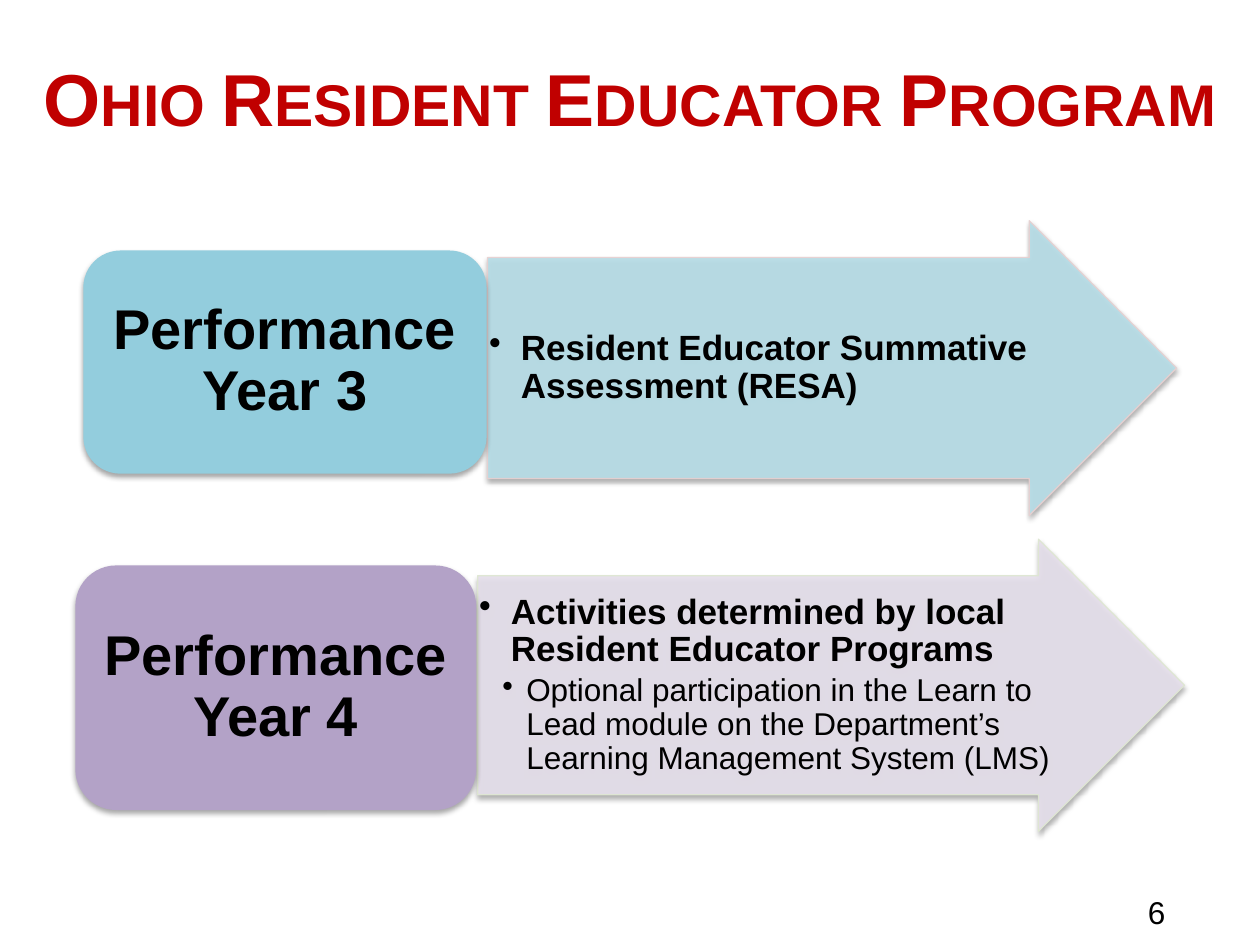
from pptx import Presentation
from pptx import util as u
from pptx.dml.color import RGBColor
from pptx.enum import shapes, text
from pptx.oxml import parse_xml
from pptx.oxml.ns import nsdecls, qn

RED = RGBColor(0xC0, 0x00, 0x00)
BLACK = RGBColor(0, 0, 0)
BLUE = RGBColor(0x93, 0xCD, 0xDD)
PALE_BLUE = RGBColor(0xB7, 0xDE, 0xE8)
PINK = RGBColor(0xE8, 0xD0, 0xD0)
PURPLE = RGBColor(0xB3, 0xA2, 0xC7)
PALE_PURPLE = RGBColor(0xE6, 0xE0, 0xEC)
GREEN = RGBColor(0xDE, 0xE7, 0xD1)

BASE = {"name": "Arial", "bold": True}
HEAD = {**BASE, "size": u.Pt(42)}
LABEL = {**BASE, "size": u.Pt(32)}
POINT = {**BASE, "size": u.Pt(20)}
SUB = {**BASE, "size": u.Pt(18), "bold": False}
CENTER = {"alignment": text.PP_ALIGN.CENTER}
TIGHT = {"line_spacing": 0.9}
ITEM = {**TIGHT, "alignment": text.PP_ALIGN.LEFT, "space_after": u.Pt(3)}

# Format, left margin and hanging indent (cm) of each list level
LEVELS = [(POINT, 0.64, 0.64), (SUB, 0.95, 0.48)]

ROWS = [
    {"label": ["Performance", "Year 3"],
     "box": (1.68, 5.05, 8.13, 4.5), "arrow": (9.83, 4.45, 13.89, 5.94),
     "tints": (BLUE, PALE_BLUE, PINK),
     "items": [(0, "Resident Educator Summative Assessment (RESA)")]},
    {"label": ["Performance", "Year 4"],
     "box": (1.52, 11.4, 8.08, 4.93), "arrow": (9.63, 10.87, 14.25, 5.89),
     "tints": (PURPLE, PALE_PURPLE, GREEN),
     "items": [(0, "Activities determined by local Resident Educator Programs"),
               (1, "Optional participation in the Learn to Lead module on "
                   "the Department’s Learning Management System (LMS)")]},
]


def apply(obj, fmt):
    for key, value in fmt.items():
        setattr(obj, key, value)


def cms(spot):
    return [u.Cm(n) for n in spot]


def write(para, words, font, fmt, color=BLACK):
    apply(para, fmt)
    run = para.add_run()
    run.text = words
    apply(run.font, font)
    run.font.color.rgb = color
    return run


def frame(shape, side, top):
    """Set margins, wrapping and middle anchor."""
    apply(shape.text_frame, {
        "margin_left": u.Cm(side), "margin_right": u.Cm(side),
        "margin_top": u.Cm(top), "margin_bottom": u.Cm(top),
        "word_wrap": True, "auto_size": text.MSO_AUTO_SIZE.NONE,
        "vertical_anchor": text.MSO_ANCHOR.MIDDLE})
    return shape.text_frame


def lines(body, count):
    """Yield the first paragraph, then new ones."""
    for i in range(count):
        yield body.add_paragraph() if i else body.paragraphs[0]


def shade(shape):
    """Add a soft shadow below the shape."""
    shape.shadow.inherit = False
    shape._element.spPr.find(qn("a:effectLst")).append(parse_xml(
        f'<a:outerShdw {nsdecls("a")} blurRad="39370" dist="22860" '
        'dir="5400000" rotWithShape="0"><a:srgbClr val="000000">'
        '<a:alpha val="35000"/></a:srgbClr></a:outerShdw>'))


def bullet(para, left, hang):
    props = para._p.get_or_add_pPr()
    props.set("marL", str(u.Cm(left)))
    props.set("indent", str(-u.Cm(hang)))
    props.append(parse_xml(f'<a:buChar {nsdecls("a")} char="•"/>'))


def add_arrow(slide, spot, fill, edge, items):
    shape = slide.shapes.add_shape(shapes.MSO_SHAPE.RIGHT_ARROW, *cms(spot))
    shape.adjustments[0] = 0.75
    shape.fill.solid()
    shape.fill.fore_color.rgb = fill
    shape.line.color.rgb = edge
    shape.line.width = u.Pt(0.75)
    # Fill and line are slightly see-through
    for tint in shape._element.spPr.iter(qn("a:srgbClr")):
        tint.append(parse_xml(f'<a:alpha {nsdecls("a")} val="90000"/>'))
    shade(shape)
    body = frame(shape, 0.03, 0.03)
    for para, (level, words) in zip(lines(body, len(items)), items):
        font, left, hang = LEVELS[level]
        write(para, words, font, {**ITEM, "level": level + 1})
        bullet(para, left, hang)


def add_label(slide, spot, fill, label):
    shape = slide.shapes.add_shape(
        shapes.MSO_SHAPE.ROUNDED_RECTANGLE, *cms(spot))
    shape.fill.solid()
    shape.fill.fore_color.rgb = fill
    shape.line.fill.background()
    shade(shape)
    body = frame(shape, 0.33, 0.18)
    for para, words in zip(lines(body, len(label)), label):
        write(para, words, LABEL, {**CENTER, **TIGHT})


def add_title(slide, words):
    title = slide.shapes.title
    apply(title, dict(zip(("left", "top", "width", "height"),
                          cms((0.23, 0.58, 24.94, 2.74)))))
    body = frame(title, 0.25, 0.13)
    run = write(body.paragraphs[0], words, HEAD, CENTER, RED)
    run.font._element.set("cap", "small")


def add_number(slide, words):
    box = slide.shapes.add_textbox(*cms((22.17, 17.88, 2.29, 1.02)))
    body = frame(box, 0.25, 0.13)
    write(body.paragraphs[0], words, SUB, CENTER)


def main():
    deck = Presentation()
    deck.slide_width, deck.slide_height = cms((25.4, 19.05))
    slide = deck.slides.add_slide(deck.slide_layouts[5])
    add_title(slide, "Ohio Resident Educator Program")
    # One arrow and one label per year
    for row in ROWS:
        main_tint, pale, edge = row["tints"]
        add_arrow(slide, row["arrow"], pale, edge, row["items"])
        add_label(slide, row["box"], main_tint, row["label"])
    add_number(slide, "6")
    deck.save("out.pptx")


if __name__ == "__main__":
    main()
